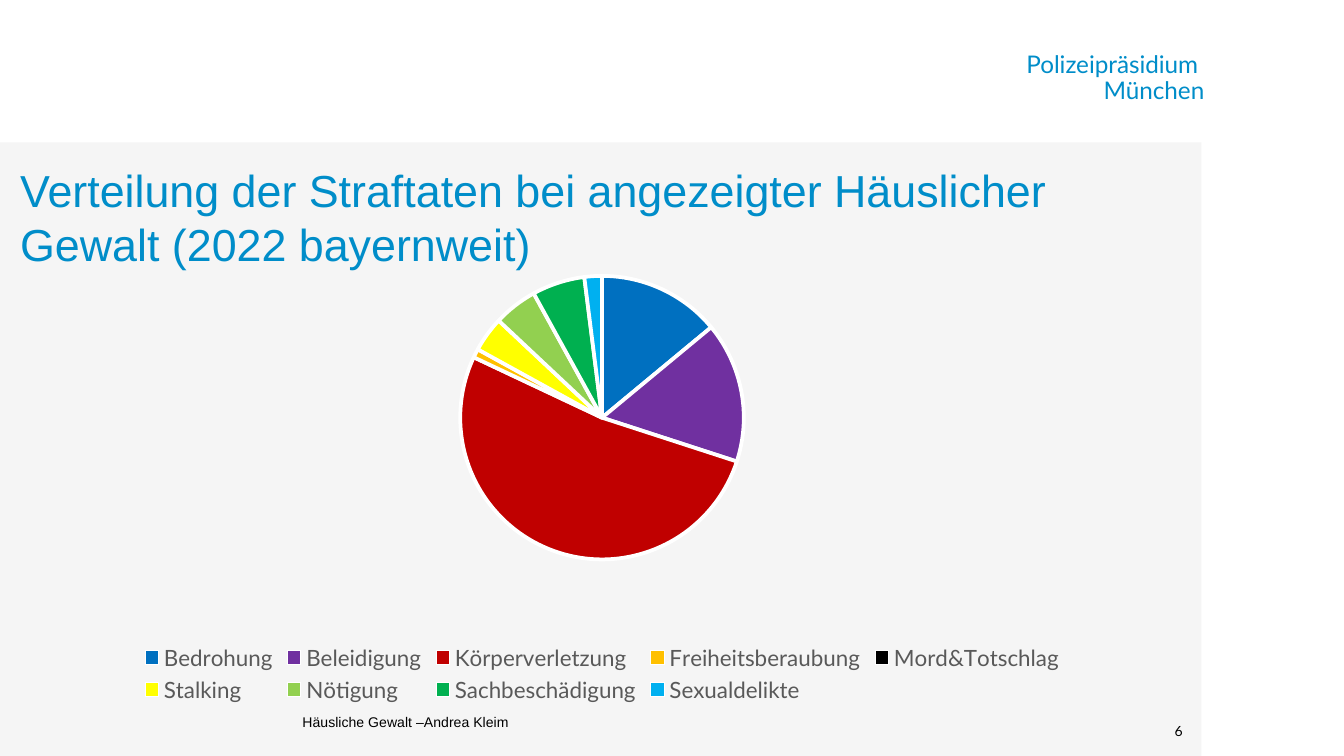
import pptx
import pptx.chart.data
import pptx.dml.color
import pptx.enum.chart
import pptx.enum.shapes
import pptx.enum.text
import pptx.oxml
import pptx.util

Pt = pptx.util.Pt
Align = pptx.enum.text.PP_ALIGN
Anchor = pptx.enum.text.MSO_ANCHOR

# Content
TITLE = "Verteilung der Straftaten bei angezeigter Häuslicher Gewalt (2022 bayernweit)"
SENDER = ["Polizeipräsidium ", "München"]
FOOTER = "Häusliche Gewalt –Andrea Kleim"
PAGE_NUMBER = "6"
OFFENCES = [  # label, percent, slice colour
    ("Bedrohung", 14, "0070C0"),
    ("Beleidigung", 16, "7030A0"),
    ("Körperverletzung", 52, "C00000"),
    ("Freiheitsberaubung", 1, "FFC000"),
    ("Mord&Totschlag", 0, "000000"),
    ("Stalking", 4, "FFFF00"),
    ("Nötigung", 5, "92D050"),
    ("Sachbeschädigung", 6, "00B050"),
    ("Sexualdelikte", 2, "00B0F0"),
]
THEME = {
    "panel": "F5F5F5", "accent": "008DC9", "text": "000000",
    "legend": "595959", "slice_line": "FFFFFF",
    "heading_font": "Arial", "body_font": "Lato",
    "title_size": 24, "sender_size": 13, "legend_size": 12,
    "chart_size": 10, "small_size": 7.5,
}

# Layout in points
SLIDE_WIDTH, SLIDE_HEIGHT = 720, 405
PANEL_TOP, PANEL_WIDTH = 76.3, 643.7
MARGIN, CONTENT_WIDTH = 10.8, 623.5
TITLE_TOP, TITLE_HEIGHT, CHART_HEIGHT = 93.6, 44.6, 241.2
PLOT_AREA = {"x": 0.02, "y": 0.04, "w": 0.96, "h": 0.63}


def color(name):
    return pptx.dml.color.RGBColor.from_string(THEME.get(name, name))


def style_font(font, family, size, ink):
    font.name = THEME[family]
    font.size = Pt(THEME[size])
    font.color.rgb = color(ink)


def add_text(page, frame, lines, family, size, ink,
             align=Align.LEFT, anchor=Anchor.MIDDLE, spacing=None):
    box = page.shapes.add_textbox(*map(Pt, frame))
    text = box.text_frame
    text.word_wrap = True
    text.vertical_anchor = anchor
    text.margin_left = text.margin_right = text.margin_top = text.margin_bottom = 0
    for index, line in enumerate(lines):
        para = text.add_paragraph() if index else text.paragraphs[0]
        para.alignment = align
        if spacing:
            para.line_spacing = Pt(spacing)
        span = para.add_run()
        span.text = line
        style_font(span.font, family, size, ink)


def add_pie(page, frame):
    data = pptx.chart.data.CategoryChartData()
    data.categories = [label for label, _, _ in OFFENCES]
    data.add_series("Series 1", [value for _, value, _ in OFFENCES])
    chart = page.shapes.add_chart(
        pptx.enum.chart.XL_CHART_TYPE.PIE, *map(Pt, frame), data).chart
    chart.has_title = False
    style_font(chart.font, "body_font", "chart_size", "text")
    chart.has_legend = True
    chart.legend.position = pptx.enum.chart.XL_LEGEND_POSITION.BOTTOM
    chart.legend.include_in_layout = False
    style_font(chart.legend.font, "body_font", "legend_size", "legend")

    # Slice colours
    plot = chart.plots[0]
    plot.vary_by_categories = True
    for index, (_, _, fill) in enumerate(OFFENCES):
        piece = plot.series[0].points[index].format
        piece.fill.solid()
        piece.fill.fore_color.rgb = color(fill)
        piece.line.color.rgb = color("slice_line")
        piece.line.width = Pt(2)

    # Fixed inner plot area
    modes = "".join(f'<c:{axis}Mode val="edge"/>' for axis in "xy")
    sizes = "".join(f'<c:{key} val="{value}"/>' for key, value in PLOT_AREA.items())
    layout = pptx.oxml.parse_xml(
        '<c:layout xmlns:c="http://schemas.openxmlformats.org/drawingml/2006/chart">'
        f'<c:manualLayout><c:layoutTarget val="inner"/>{modes}{sizes}'
        '</c:manualLayout></c:layout>')
    area = chart.element.chart.plotArea
    for old in area.xpath("c:layout"):
        area.remove(old)
    area.insert(0, layout)


def main():
    deck = pptx.Presentation()
    deck.slide_width, deck.slide_height = Pt(SLIDE_WIDTH), Pt(SLIDE_HEIGHT)
    page = deck.slides.add_slide(deck.slide_layouts[6])

    # Grey content panel
    panel = page.shapes.add_shape(
        pptx.enum.shapes.MSO_SHAPE.RECTANGLE,
        0, Pt(PANEL_TOP), Pt(PANEL_WIDTH), Pt(SLIDE_HEIGHT - PANEL_TOP))
    panel.shadow.inherit = False
    panel.fill.solid()
    panel.fill.fore_color.rgb = color("panel")
    panel.line.fill.background()

    # Sender, footer and page number
    add_text(page, (521.3, 28.1, 123.8, 28), SENDER, "body_font", "sender_size",
             "accent", Align.RIGHT, Anchor.TOP, spacing=14)
    add_text(page, (162, 382.3, 400, 9.4), [FOOTER], "heading_font", "small_size", "text")
    add_text(page, (602, 380.2, 31.7, 22.3), [PAGE_NUMBER], "body_font", "small_size",
             "text", Align.RIGHT)

    # Title and chart
    add_text(page, (MARGIN, TITLE_TOP, CONTENT_WIDTH, TITLE_HEIGHT), [TITLE],
             "heading_font", "title_size", "accent", spacing=29)
    add_pie(page, (MARGIN, TITLE_TOP + TITLE_HEIGHT, CONTENT_WIDTH, CHART_HEIGHT))

    deck.save("out.pptx")


if __name__ == "__main__":
    main()
